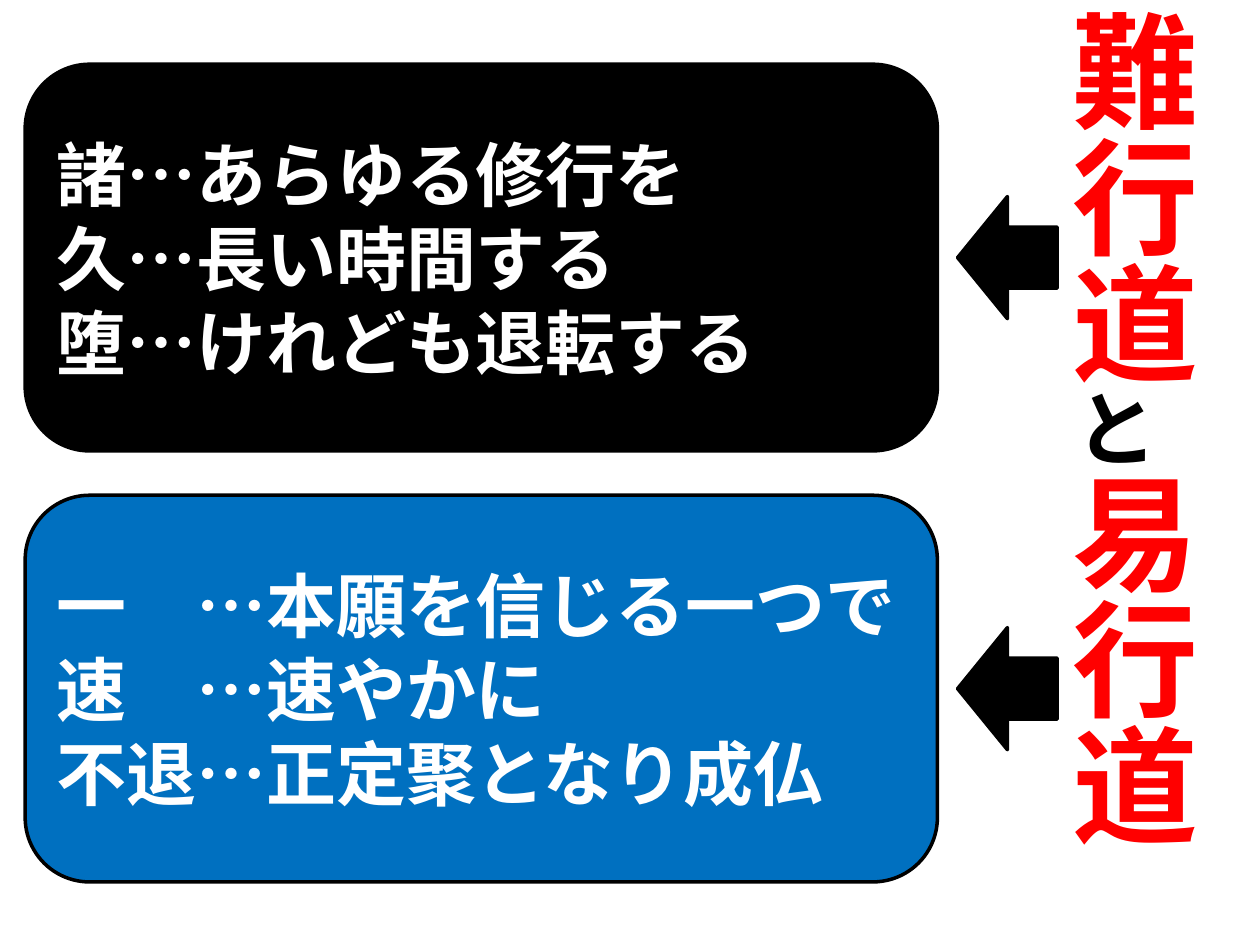
"""Build the slide contrasting the difficult path with the easy path."""
from dataclasses import dataclass

import pptx
import pptx.dml.color
import pptx.enum.shapes
import pptx.enum.text
import pptx.oxml
import pptx.oxml.ns
import pptx.util

Pt = pptx.util.Pt
Color = pptx.dml.color.RGBColor
Shape = pptx.enum.shapes.MSO_SHAPE
Anchor = pptx.enum.text.MSO_ANCHOR
Align = pptx.enum.text.PP_ALIGN


@dataclass(frozen=True)
class Theme:
    """Colours, type sizes and font of the slide."""

    font: str = "Noto Sans CJK JP"
    black: Color = Color(0, 0, 0)
    white: Color = Color(255, 255, 255)
    red: Color = Color(255, 0, 0)
    blue: Color = Color(0, 0x70, 0xC0)
    title_size: float = 72
    joiner_size: float = 48
    body_size: float = 40
    line_width: float = 2


THEME = Theme()


@dataclass(frozen=True)
class Panel:
    """A rounded explanation panel and its top edge."""

    top: float
    fill: Color
    lines: tuple[str, ...]


PANEL_LEFT, PANEL_WIDTH, PANEL_HEIGHT = 14.4, 521.3, 221
ARROW_LEFT, ARROW_WIDTH, ARROW_HEIGHT = 547.2, 56.9, 69.8
PANELS = (
    Panel(36.7, THEME.black, ("諸…あらゆる修行を", "久…長い時間する", "堕…けれども退転する")),
    Panel(283, THEME.blue, ("一　…本願を信じる一つで", "速　…速やかに", "不退…正定聚となり成仏")),
)
TITLE = (
    ("難行道", THEME.title_size, THEME.red),
    ("と", THEME.joiner_size, THEME.black),
    ("易行道", THEME.title_size, THEME.red),
)


def add_span(para, text: str, size: float, color: Color) -> None:
    """Add one bold run with the theme font for Latin and East Asian text."""
    span = para.add_run()
    span.text = text
    span.font.size = Pt(size)
    span.font.bold = True
    span.font.color.rgb = color
    span.font.name = THEME.font
    east_asian = pptx.oxml.parse_xml(
        f'<a:ea {pptx.oxml.ns.nsdecls("a")} typeface="{THEME.font}"/>'
    )
    span.font._element.find(pptx.oxml.ns.qn("a:latin")).addnext(east_asian)


def add_block(page, kind: Shape, left: float, top: float, width: float, height: float, fill: Color):
    """Add a filled, black-outlined preset shape without shadow."""
    block = page.shapes.add_shape(kind, Pt(left), Pt(top), Pt(width), Pt(height))
    block.shadow.inherit = False
    block.fill.solid()
    block.fill.fore_color.rgb = fill
    block.line.color.rgb = THEME.black
    block.line.width = Pt(THEME.line_width)
    return block


def add_panel(page, panel: Panel) -> None:
    """Draw a panel with its lines and the arrow that points at it."""
    box = add_block(
        page, Shape.ROUNDED_RECTANGLE, PANEL_LEFT, panel.top, PANEL_WIDTH, PANEL_HEIGHT, panel.fill
    )
    frame = box.text_frame
    frame.word_wrap = True
    frame.vertical_anchor = Anchor.MIDDLE
    for index, line in enumerate(panel.lines):
        para = frame.add_paragraph() if index else frame.paragraphs[0]
        para.alignment = Align.LEFT
        add_span(para, line, THEME.body_size, THEME.white)
    arrow_top = panel.top + (PANEL_HEIGHT - ARROW_HEIGHT) / 2
    arrow = add_block(
        page, Shape.RIGHT_ARROW, ARROW_LEFT, arrow_top, ARROW_WIDTH, ARROW_HEIGHT, THEME.black
    )
    arrow.rotation = 180


def format_title(page) -> None:
    """Set the title vertically along the right edge."""
    box = page.shapes.title
    box.left, box.top, box.width, box.height = Pt(516.2), Pt(1.4), Pt(206.6), Pt(538.6)
    frame = box.text_frame
    frame.word_wrap = True
    frame.auto_size = pptx.enum.text.MSO_AUTO_SIZE.NONE
    frame.vertical_anchor = Anchor.TOP
    frame._txBody.bodyPr.set("vert", "eaVert")
    para = frame.paragraphs[0]
    para.alignment = Align.LEFT
    para.line_spacing = 1.3
    for text, size, color in TITLE:
        add_span(para, text, size, color)


def main() -> None:
    """Create the deck and save it."""
    deck = pptx.Presentation()
    deck.slide_width, deck.slide_height = Pt(720), Pt(540)
    page = deck.slides.add_slide(deck.slide_layouts[5])
    format_title(page)
    for panel in PANELS:
        add_panel(page, panel)
    deck.save("out.pptx")


if __name__ == "__main__":
    main()
